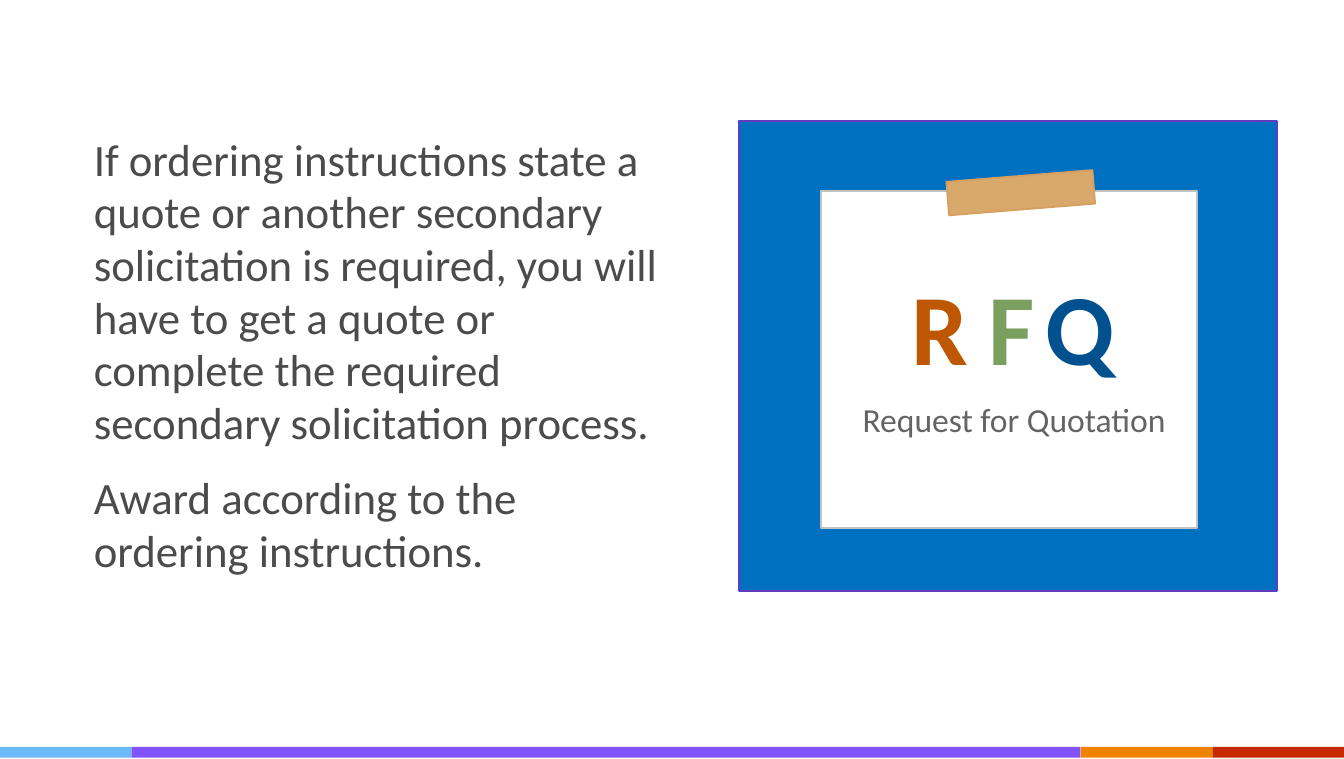
from pptx import Presentation
from pptx.dml.color import RGBColor
from pptx.enum.shapes import MSO_SHAPE
from pptx.enum.text import MSO_ANCHOR, MSO_AUTO_SIZE, PP_ALIGN
from pptx.util import Emu, Pt

RECTANGLE = MSO_SHAPE.RECTANGLE
TOP, MIDDLE = MSO_ANCHOR.TOP, MSO_ANCHOR.MIDDLE
LEFT, CENTER = PP_ALIGN.LEFT, PP_ALIGN.CENTER
NO_FIT, GROW = MSO_AUTO_SIZE.NONE, MSO_AUTO_SIZE.SHAPE_TO_FIT_TEXT

PX = 9144
FONT = "Calibri"
COLORS = {
    "body": "4B4B4B", "caption": "646464",
    "sky": "6BBAFC", "violet": "8252FF", "orange": "EF8300", "red": "C72900",
    "board": "0070C0", "board_edge": "603DBD",
    "paper": "FFFFFF", "paper_edge": "C1C1C1",
    "tape": "D9A86B", "tape_edge": "D6A160",
    "R": "BE5702", "F": "7A9F5F", "Q": "00518E",
}
GUIDANCE = [
    "If ordering instructions state a quote or another secondary solicitation is "
    "required, you will have to get a quote or complete the required secondary "
    "solicitation process.",
    "Award according to the ordering instructions.",
]


def px(*lengths):
    """Turn px lengths into EMU."""
    return [Emu(length * PX) for length in lengths]


def rgb(name):
    """Look up a named colour."""
    return RGBColor.from_string(COLORS[name])


def apply(target, values):
    """Set each attribute of target from a dict."""
    for attribute, value in values.items():
        setattr(target, attribute, value)


def add_block(shapes, box, fill, edge=None):
    """Add a filled rectangle, with a thin edge if one is named."""
    block = shapes.add_shape(RECTANGLE, *px(*box))
    block.shadow.inherit = False
    block.fill.solid()
    block.fill.fore_color.rgb = rgb(fill)
    if edge:
        block.line.color.rgb = rgb(edge)
        block.line.width = Pt(1)
    else:
        block.line.fill.background()
    return block


def add_words(shapes, box, paragraphs, color, font, frame, layout):
    """Add a text box whose paragraphs share one format."""
    words = shapes.add_textbox(*px(*box)).text_frame
    apply(words, frame)
    for index, sentence in enumerate(paragraphs):
        paragraph = words.add_paragraph() if index else words.paragraphs[0]
        apply(paragraph, layout)
        run = paragraph.add_run()
        run.text = sentence
        apply(run.font, {"name": FONT, **font})
        run.font.color.rgb = rgb(color)


def add_footer(shapes, left, top, width, height):
    """Draw the four-colour strip, with a wide violet part."""
    end = 98
    bands = {"sky": end, "violet": width - 3 * end, "orange": end, "red": end}
    for color, span in bands.items():
        add_block(shapes, (left, top, span, height), color)
        left += span


def add_guidance(shapes, *box):
    """Write the ordering guidance."""
    add_words(shapes, box, GUIDANCE, "body", {"size": Pt(24)},
              {"word_wrap": True, "auto_size": NO_FIT, "vertical_anchor": MIDDLE},
              {"alignment": LEFT, "space_after": Pt(12), "line_spacing": 0.98})


def add_quotation_card(shapes, left, top, width, height):
    """Draw the taped RFQ note on its blue board."""
    card = shapes.add_group_shape().shapes
    add_block(card, (left, top, width, height), "board", "board_edge")
    add_block(card, (left + 61, top + 52, 280, 251), "paper", "paper_edge")
    tape = add_block(card, (left + 155, top + 41, 109, 25), "tape", "tape_edge")
    tape.rotation = -4.6
    for letter, offset, span in (("R", 118, 63), ("F", 175, 55), ("Q", 218, 72)):
        add_words(card, (left + offset, top + 102, span, 100), [letter], letter,
                  {"size": Pt(54), "bold": True},
                  {"word_wrap": False, "auto_size": GROW, "vertical_anchor": TOP},
                  {"alignment": CENTER})
    add_words(card, (left + 82, top + 202, 253, 40), ["Request for Quotation"],
              "caption", {"size": Pt(18)},
              {"word_wrap": True, "auto_size": GROW, "vertical_anchor": TOP},
              {"alignment": LEFT})


def main():
    """Build and save the slide."""
    deck = Presentation()
    deck.slide_width, deck.slide_height = px(1000, 565)
    shapes = deck.slides.add_slide(deck.slide_layouts[6]).shapes
    add_footer(shapes, 0, 556, 1000, 8)
    add_guidance(shapes, 60, 90, 450, 350)
    add_quotation_card(shapes, 550, 90, 400, 350)
    deck.save("out.pptx")


if __name__ == "__main__":
    main()
